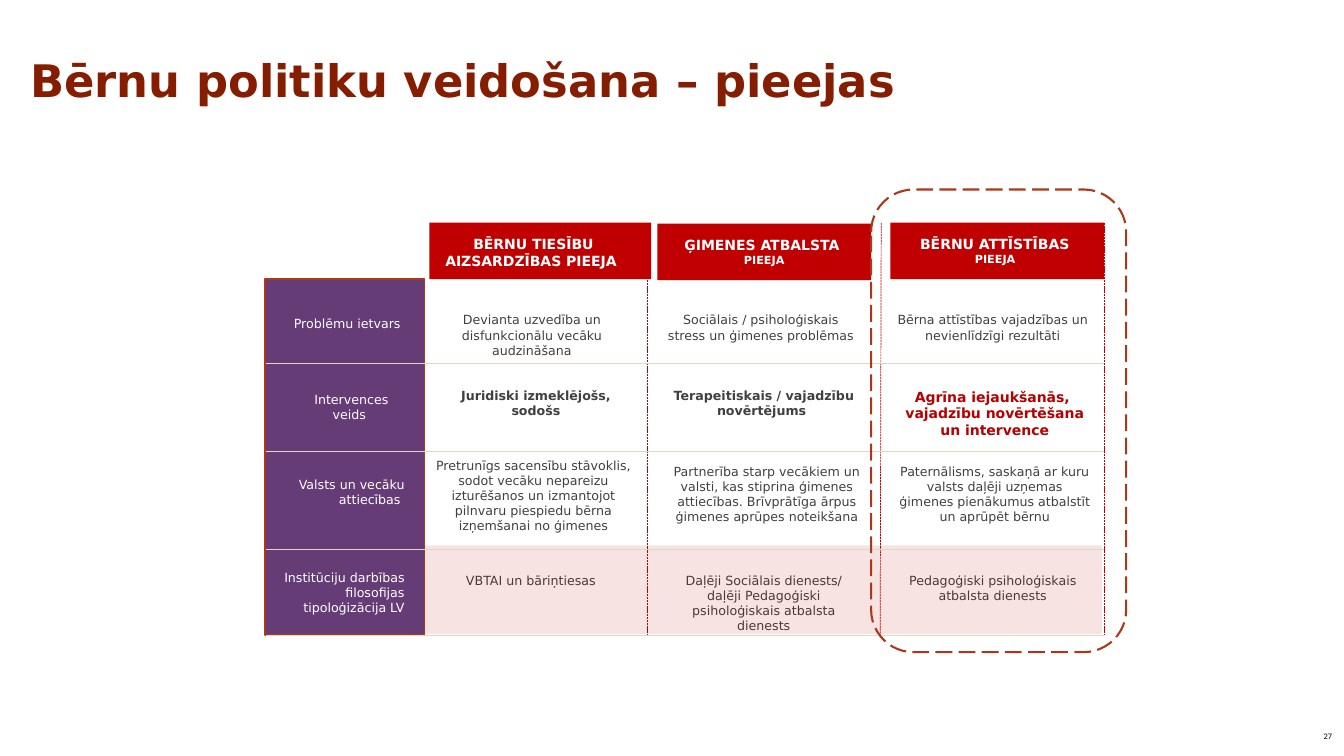
import pptx
import pptx.dml.color
import pptx.enum.dml
import pptx.enum.shapes
import pptx.enum.text
import pptx.oxml
import pptx.oxml.ns
import pptx.util
from dataclasses import dataclass

Inches = pptx.util.Inches
Align = pptx.enum.text.PP_ALIGN
Anchor = pptx.enum.text.MSO_ANCHOR
Shape = pptx.enum.shapes.MSO_SHAPE
Dash = pptx.enum.dml.MSO_LINE


@dataclass(frozen=True)
class Theme:
    font: str = "DejaVu Sans"
    number_font: str = "Calibri"
    title: str = "851D00"
    purple: str = "653C76"
    rust: str = "AC3819"
    red: str = "C00000"
    accent: str = "B40000"
    body: str = "404040"
    rule: str = "DDD9C3"
    white: str = "FFFFFF"
    black: str = "000000"
    title_size: int = 32
    head_size: int = 10
    body_size: int = 9
    small_size: int = 8
    number_size: int = 6


def rgb(color):
    return pptx.dml.color.RGBColor.from_string(color)


class SlideBuilder:
    def __init__(self, slide, theme):
        self.s = slide
        self.t = theme

    def style(self, r, size, color, bold=False, font=None):
        r.font.name = font or self.t.font
        r.font.size = pptx.util.Pt(size)
        r.font.bold = bold
        r.font.color.rgb = rgb(color)

    def title(self, text, x, y, w, h):
        sp = self.s.shapes.title
        sp.left, sp.top, sp.width, sp.height = map(Inches, (x, y, w, h))
        tf = sp.text_frame
        tf.text = text
        tf.vertical_anchor = Anchor.TOP
        p = tf.paragraphs[0]
        p.alignment = Align.LEFT
        p.line_spacing = 0.9
        self.style(p.runs[0], self.t.title_size, self.t.title, True)

    def text(self, lines, x, y, w, h, sizes=None, color=None, bold=False,
             align=Align.CENTER, font=None, anchor=Anchor.TOP):
        tf = self.s.shapes.add_textbox(*map(Inches, (x, y, w, h))).text_frame
        tf.word_wrap = True
        tf.vertical_anchor = anchor
        tf.text = lines
        for p, size in zip(tf.paragraphs, sizes or [self.t.body_size]):
            p.alignment = align
            self.style(p.runs[0], size, color or self.t.body, bold, font)

    def box(self, x, y, w, h, fill=None, line=None, width=1, dash=None,
            kind=Shape.RECTANGLE, opacity=None):
        sp = self.s.shapes.add_shape(kind, *map(Inches, (x, y, w, h)))
        sp.shadow.inherit = False
        if fill:
            sp.fill.solid()
            sp.fill.fore_color.rgb = rgb(fill)
        else:
            sp.fill.background()
        if opacity:
            clr = sp.fill._xPr.find(".//" + pptx.oxml.ns.qn("a:srgbClr"))
            alpha = pptx.oxml.parse_xml(
                f'<a:alpha {pptx.oxml.ns.nsdecls("a")} val="{opacity * 1000}"/>')
            clr.append(alpha)
        if line:
            self.stroke(sp.line, line, width, dash)
        else:
            sp.line.fill.background()

    def line(self, x1, y1, x2, y2, color, dash=None):
        c = self.s.shapes.add_connector(
            pptx.enum.shapes.MSO_CONNECTOR.STRAIGHT, *map(Inches, (x1, y1, x2, y2)))
        self.stroke(c.line, color, 0.5, dash)
        c._element.spPr.append(pptx.oxml.parse_xml(
            f'<a:effectLst {pptx.oxml.ns.nsdecls("a")}/>'))

    def stroke(self, line, color, width, dash):
        line.color.rgb = rgb(color)
        line.width = pptx.util.Pt(width)
        if dash:
            line.dash_style = dash


ROW_LABELS = [  # text, left, top, width, height, alignment
    ("Problēmu ietvars ", 2.37, 3.08, 1.74, 0.25, Align.RIGHT),
    ("Intervences veids ", 2.86, 3.84, 1.25, 0.4, Align.CENTER),
    ("Valsts un vecāku attiecības ", 2.63, 4.68, 1.48, 0.4, Align.RIGHT),
    ("Institūciju darbības filosofijas tipoloģizācija LV", 2.63, 5.6, 1.48, 0.56, Align.RIGHT),
]
HEADERS = [  # text, bar left, top, width, text left
    ("BĒRNU TIESĪBU AIZSARDZĪBAS PIEEJA ", 4.26, 2.21, 2.2, 4.23),
    ("ĢIMENES ATBALSTA \nPIEEJA", 6.52, 2.22, 2.12, 6.52),
    ("BĒRNU ATTĪSTĪBAS \nPIEEJA ", 8.83, 2.21, 2.12, 8.83),
]
APPROACHES = [  # one column each: (text, left, top, width)
    [("Devianta uzvedība un disfunkcionālu vecāku audzināšana", 4.23, 3.05, 2.09),
     ("Juridiski izmeklējošs, sodošs", 4.27, 3.8, 2.09),
     ("Pretrunīgs sacensību stāvoklis, sodot vecāku nepareizu izturēšanos un "
      "izmantojot pilnvaru piespiedu bērna izņemšanai no ģimenes", 4.19, 4.49, 2.2),
     ("VBTAI un bāriņtiesas", 4.22, 5.63, 2.09)],
    [("Sociālais / psiholoģiskais stress un ģimenes problēmas", 6.5, 3.05, 2.09),
     ("Terapeitiskais / vajadzību novērtējums ", 6.53, 3.8, 2.09),
     ("Partnerība starp vecākiem un valsti, kas stiprina ģimenes attiecības. "
      "Brīvprātīga ārpus ģimenes aprūpes noteikšana", 6.56, 4.55, 2.09),
     ("Daļēji Sociālais dienests/ daļēji Pedagoģiski psiholoģiskais atbalsta "
      "dienests", 6.53, 5.63, 2.09)],
    [("Bērna attīstības vajadzības un nevienlīdzīgi rezultāti", 8.8, 3.05, 2.09),
     ("Agrīna iejaukšanās,  vajadzību novērtēšana un intervence", 8.82, 3.8, 2.09),
     ("Paternālisms, saskaņā ar kuru valsts daļēji uzņemas ģimenes pienākumus "
      "atbalstīt un aprūpēt bērnu", 8.82, 4.55, 2.09),
     ("Pedagoģiski psiholoģiskais atbalsta dienests", 8.8, 5.63, 2.09)],
]
ROW_HEIGHTS = [0.56, 0.61, 0.86, 0.71]
INTERVENTION_ROW = 1


def main():
    prs = pptx.Presentation()
    prs.slide_width, prs.slide_height = Inches(13.33), Inches(7.5)
    t = Theme()
    b = SlideBuilder(prs.slides.add_slide(prs.slide_layouts[5]), t)
    b.title("Bērnu politiku veidošana – pieejas", 0.2, 0.53, 11.5, 1.45)

    # Row labels
    b.box(2.63, 2.77, 1.58, 3.53, t.purple, t.rust)
    for label, x, y, w, h, align in ROW_LABELS:
        b.text(label, x, y, w, h, color=t.white, align=align)

    # Column headers
    for head, x, y, w, text_x in HEADERS:
        b.box(x, y, w, 0.56, t.red)
        b.text(head, text_x, y + 0.08, 2.12, 0.44, [t.head_size, t.small_size],
               t.white, True)

    # Column dividers
    for top_x, bottom_x in [(6.42, 6.42), (8.74, 8.73), (10.95, 10.95)]:
        b.line(top_x, 2.21, bottom_x, 6.3, t.red, Dash.SQUARE_DOT)

    # Approach cells, with the last intervention emphasised
    for cells in APPROACHES:
        for row, (text, x, y, w) in enumerate(cells):
            bold = row == INTERVENTION_ROW
            key = bold and cells is APPROACHES[-1]
            b.text(text, x, y, w, ROW_HEIGHTS[row],
                   [t.head_size if key else t.body_size],
                   t.accent if key else t.body, bold)

    # Tinted last row and row rules
    b.box(4.21, 5.41, 6.72, 0.88, t.red, opacity=11)
    for y in (3.6, 4.48, 5.45, 6.3):
        b.line(2.64, y, 10.95, y, t.rule)

    # Highlighted approach
    b.box(8.64, 1.88, 2.53, 4.59, line=t.rust, width=1.5, dash=Dash.LONG_DASH,
          kind=Shape.ROUNDED_RECTANGLE)

    # Slide number
    b.text("27", 13.01, 7.1, 0.32, 0.4, [t.number_size], t.black,
           font=t.number_font, anchor=Anchor.MIDDLE)
    prs.save("out.pptx")


if __name__ == "__main__":
    main()
